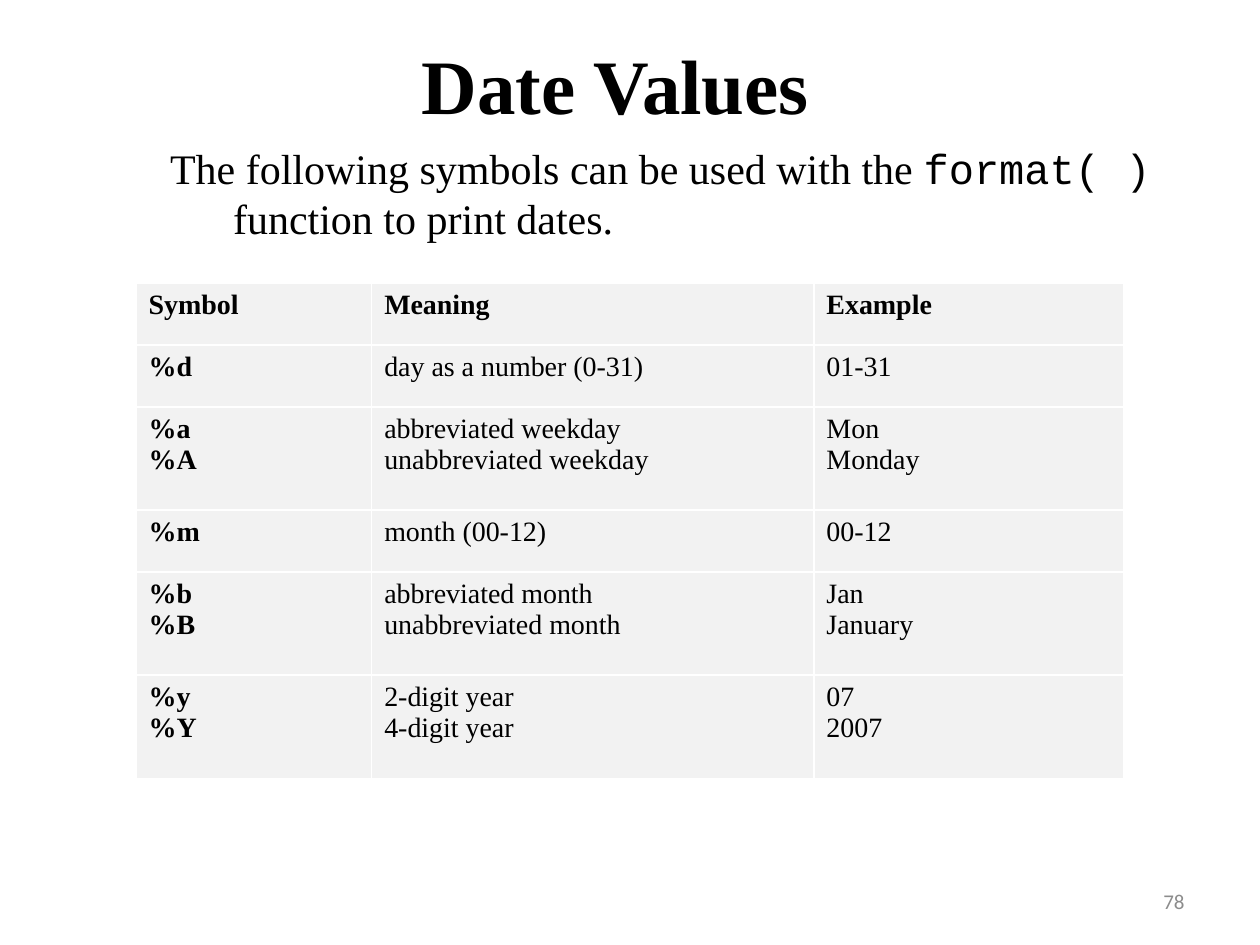
from lxml import etree
from pptx import Presentation
from pptx import util as u
from pptx.dml.color import RGBColor
from pptx.enum import text
from pptx.oxml.ns import qn

COLORS = {"ink": "000000", "cell": "F2F2F2", "number": "8C8C8C"}
SERIF, MONO, SANS = "Times New Roman", "Courier New", "Calibri"
COLUMNS = [1.87, 3.51, 2.46]
SINGLE_ROW, DOUBLE_ROW = 0.49, 0.82
SYMBOLS = [
    ("Symbol", "Meaning", "Example"),
    ("%d", "day as a number (0-31)", "01-31"),
    ("%a\n%A", "abbreviated weekday \nunabbreviated weekday", "Mon\nMonday"),
    ("%m", "month (00-12)", "00-12"),
    ("%b\n%B", "abbreviated month\nunabbreviated month", "Jan\nJanuary"),
    ("%y\n%Y", "2-digit year \n4-digit year", "07\n2007"),
]


class SlideBuilder:
    """Holds the style and the current slide, and adds each kind of element."""

    def __init__(self, page):
        self.page = page

    def place(self, shape, left, top, width, height):
        shape.left, shape.top = u.Inches(left), u.Inches(top)
        shape.width, shape.height = u.Inches(width), u.Inches(height)

    def style(self, span, size, font=SERIF, color="ink", bold=False):
        span.font.size = u.Pt(size)
        span.font.name = font
        span.font.bold = bold
        span.font.color.rgb = RGBColor.from_string(COLORS[color])

    def title(self, words, *area):
        box = self.page.shapes.title
        self.place(box, *area)
        frame = box.text_frame
        frame.text = words
        frame.auto_size = text.MSO_AUTO_SIZE.NONE
        frame.vertical_anchor = text.MSO_ANCHOR.MIDDLE
        para = frame.paragraphs[0]
        para.alignment = text.PP_ALIGN.CENTER
        self.style(para.runs[0], 44, bold=True)

    def body(self, pieces, *area):
        box = self.page.placeholders[1]
        self.place(box, *area)
        box.text_frame.auto_size = text.MSO_AUTO_SIZE.NONE
        para = box.text_frame.paragraphs[0]
        para.level = 2
        para.space_before = u.Pt(4.8)
        properties = para._p.get_or_add_pPr()
        properties.set("marL", str(u.Inches(1.5)))
        properties.set("indent", str(u.Inches(-0.5)))
        etree.SubElement(properties, qn("a:buNone"))
        for words, font in pieces:
            span = para.add_run()
            span.text = words
            self.style(span, 24, font)

    def table(self, rows, left, top):
        heights = [DOUBLE_ROW if "\n" in row[0] else SINGLE_ROW for row in rows]
        table = self.page.shapes.add_table(
            len(rows), len(COLUMNS), u.Inches(left), u.Inches(top),
            u.Inches(sum(COLUMNS)), u.Inches(sum(heights))).table
        for column, width in zip(table.columns, COLUMNS):
            column.width = u.Inches(width)
        for i, (row, height) in enumerate(zip(rows, heights)):
            table.rows[i].height = u.Inches(height)
            for j, words in enumerate(row):
                self.cell(table.cell(i, j), words, bold=i == 0 or j == 0)

    def cell(self, cell, words, bold):
        cell.fill.solid()
        cell.fill.fore_color.rgb = RGBColor.from_string(COLORS["cell"])
        para = cell.text_frame.paragraphs[0]
        para.text = words
        for span in para.runs:
            self.style(span, 16, bold=bold)
        for line_break in para._p.findall(qn("a:br")):
            etree.SubElement(line_break, qn("a:rPr")).set("sz", "1600")

    def page_number(self, words, *area):
        box = self.page.shapes.add_textbox(*(u.Inches(length) for length in area))
        frame = box.text_frame
        frame.word_wrap = True
        frame.vertical_anchor = text.MSO_ANCHOR.MIDDLE
        frame.text = words
        para = frame.paragraphs[0]
        para.alignment = text.PP_ALIGN.RIGHT
        self.style(para.runs[0], 12, SANS, "number")


def main():
    deck = Presentation()
    deck.slide_width, deck.slide_height = u.Inches(10), u.Inches(7.5)
    slide = SlideBuilder(deck.slides.add_slide(deck.slide_layouts[1]))
    slide.page_number("78", 7.17, 6.95, 2.33, 0.4)
    slide.title("Date Values", 0, 0.25, 9.77, 0.83)
    slide.body([("The following symbols can be used with the ", SERIF),
                ("format( )", MONO),
                (" function to print dates.", SERIF)], 0.25, 1.08, 9.75, 4.17)
    slide.table(SYMBOLS, 1.08, 2.25)
    deck.save("out.pptx")


if __name__ == "__main__":
    main()
